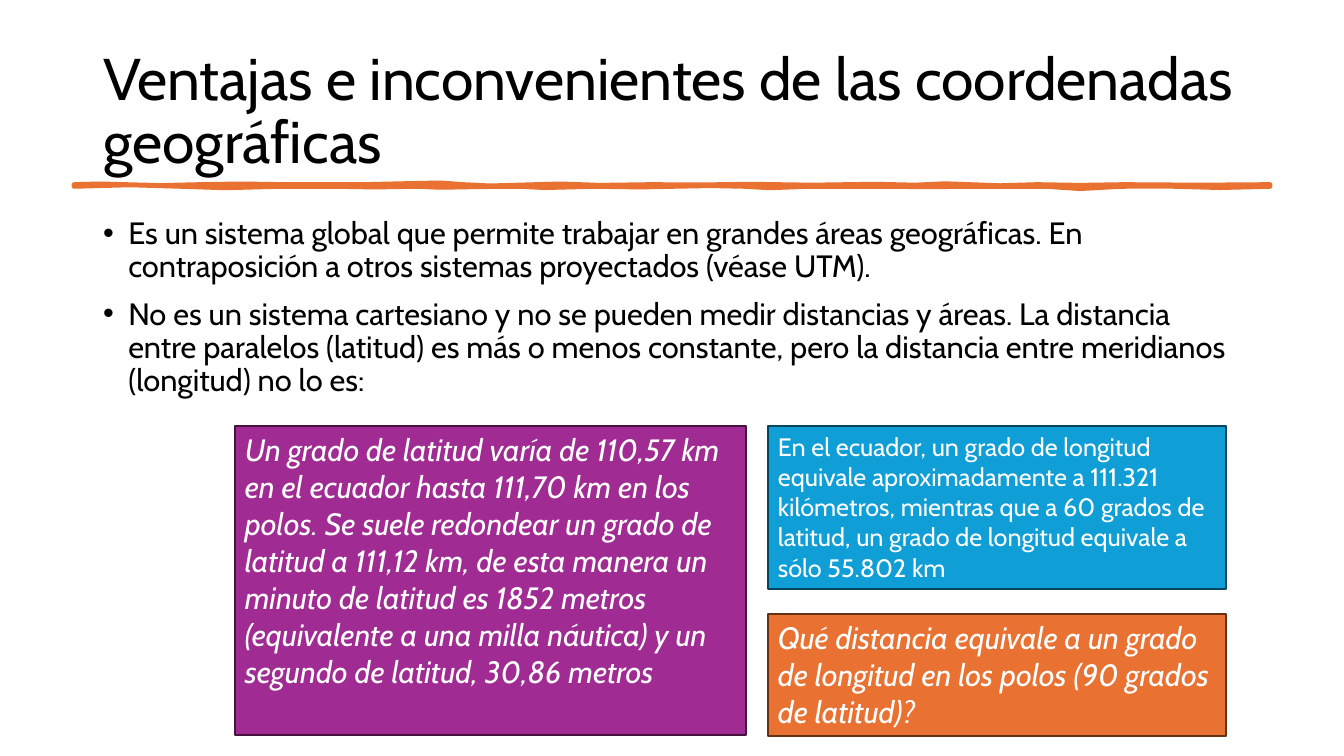
"""Build the slide on the pros and cons of geographic coordinates."""
from lxml import etree
from pptx import Presentation
from pptx import util as u
from pptx.dml.color import RGBColor
from pptx.enum import shapes, text
from pptx.oxml.ns import qn

PX = 914400 / 100.8
THEME = dict(font="Cabin", ink="000000", pale="FFFFFF", title=42, body=22, small=18,
             plum="A02B93", plum_rim="461340", blue="0F9ED5", blue_rim="07455D",
             rust="E97132", rust_rim="663216")


def px(*vals):
    return [u.Emu(round(v * PX)) for v in vals]


def write(frame, *paras, size="body", color="ink", italic=False, lead=1.0,
          gap=0, bullet=False, anchor=text.MSO_ANCHOR.TOP):
    frame.word_wrap = True
    frame.auto_size = text.MSO_AUTO_SIZE.NONE
    frame.vertical_anchor = anchor
    for i, words in enumerate(paras):
        para = frame.add_paragraph() if i else frame.paragraphs[0]
        para.alignment = text.PP_ALIGN.LEFT
        para.line_spacing = lead
        para.space_before = u.Pt(gap if i else 0)
        if bullet:
            props = para._p.get_or_add_pPr()
            props.set("marL", str(u.Inches(0.25)))
            props.set("indent", str(-u.Inches(0.25)))
            etree.SubElement(props, qn("a:buFont")).set("typeface", "Arial")
            etree.SubElement(props, qn("a:buChar")).set("char", "•")
        run = para.add_run()
        run.text = words
        run.font.name = THEME["font"]
        run.font.size = u.Pt(THEME[size])
        run.font.italic = italic
        run.font.color.rgb = RGBColor.from_string(THEME[color])


deck = Presentation()
deck.slide_width, deck.slide_height = px(1344, 756)
slide = deck.slides.add_slide(deck.slide_layouts[1])

title, body = slide.placeholders
title.left, title.top, title.width, title.height = px(93, 40, 1159, 146)
write(title.text_frame, "Ventajas e inconvenientes de las coordenadas geográficas",
      size="title", lead=0.9, anchor=text.MSO_ANCHOR.MIDDLE)

TOP = [(74, 1845), (100, 1838), (125, 1845), (160, 1854), (200, 1845), (240, 1838),
       (286, 1845), (364, 1845), (410, 1834), (440, 1828), (463, 1845), (490, 1858),
       (537, 1845), (560, 1838), (600, 1852), (651, 1845), (700, 1848), (750, 1841),
       (812, 1850), (875, 1841), (915, 1850), (945, 1836), (1000, 1856), (1037, 1845),
       (1080, 1852), (1124, 1845), (1200, 1850), (1270, 1845)]
LOW = [(1270, 1865), (1220, 1878), (1170, 1864), (1121, 1865), (1080, 1888), (1046, 1865),
       (932, 1868), (806, 1866), (770, 1880), (744, 1865), (710, 1858), (640, 1872),
       (595, 1865), (545, 1878), (519, 1865), (481, 1868), (440, 1875), (417, 1865),
       (375, 1872), (331, 1865), (280, 1865), (225, 1880), (181, 1865), (130, 1850),
       (74, 1865)]
edge = [(x * 10, y) for x, y in TOP + LOW]
pen = slide.shapes.build_freeform(*edge[0], scale=PX / 10)
pen.add_line_segments(edge[1:], close=True)
stroke = pen.convert_to_shape()
stroke.shadow.inherit = False
stroke.fill.solid()
stroke.fill.fore_color.rgb = RGBColor.from_string(THEME["rust"])
stroke.line.color.rgb = RGBColor.from_string(THEME["rust"])
stroke.line.width = u.Pt(3.25)

body.left, body.top, body.width, body.height = px(93, 213, 1159, 469)
write(body.text_frame,
      "Es un sistema global que permite trabajar en grandes áreas geográficas. "
      "En contraposición a otros sistemas proyectados (véase UTM).",
      "No es un sistema cartesiano y no se pueden medir distancias y áreas. "
      "La distancia entre paralelos (latitud) es más o menos constante, pero "
      "la distancia entre meridianos (longitud) no lo es:",
      lead=0.9, gap=10, bullet=True)

CARDS = [
    ((235, 426, 511, 309), "plum", "body", True,
     "Un grado de latitud varía de 110,57 km en el ecuador hasta 111,70 km en los "
     "polos. Se suele redondear un grado de latitud a 111,12 km, de esta manera un "
     "minuto de latitud es 1852 metros (equivalente a una milla náutica) y un "
     "segundo de latitud, 30,86 metros"),
    ((768, 426, 458, 163), "blue", "small", False,
     "En el ecuador, un grado de longitud equivale aproximadamente a 111.321 "
     "kilómetros, mientras que a 60 grados de latitud, un grado de longitud "
     "equivale a sólo 55.802 km"),
    ((768, 614, 458, 122), "rust", "body", True,
     "Qué distancia equivale a un grado de longitud en los polos (90 grados de "
     "latitud)?"),
]
for place, hue, size, slant, words in CARDS:
    card = slide.shapes.add_shape(shapes.MSO_SHAPE.RECTANGLE, *px(*place))
    card.shadow.inherit = False
    card.fill.solid()
    card.fill.fore_color.rgb = RGBColor.from_string(THEME[hue])
    card.line.color.rgb = RGBColor.from_string(THEME[hue + "_rim"])
    card.line.width = u.Pt(1.5)
    write(card.text_frame, words, size=size, color="pale", italic=slant)

deck.save("out.pptx")
